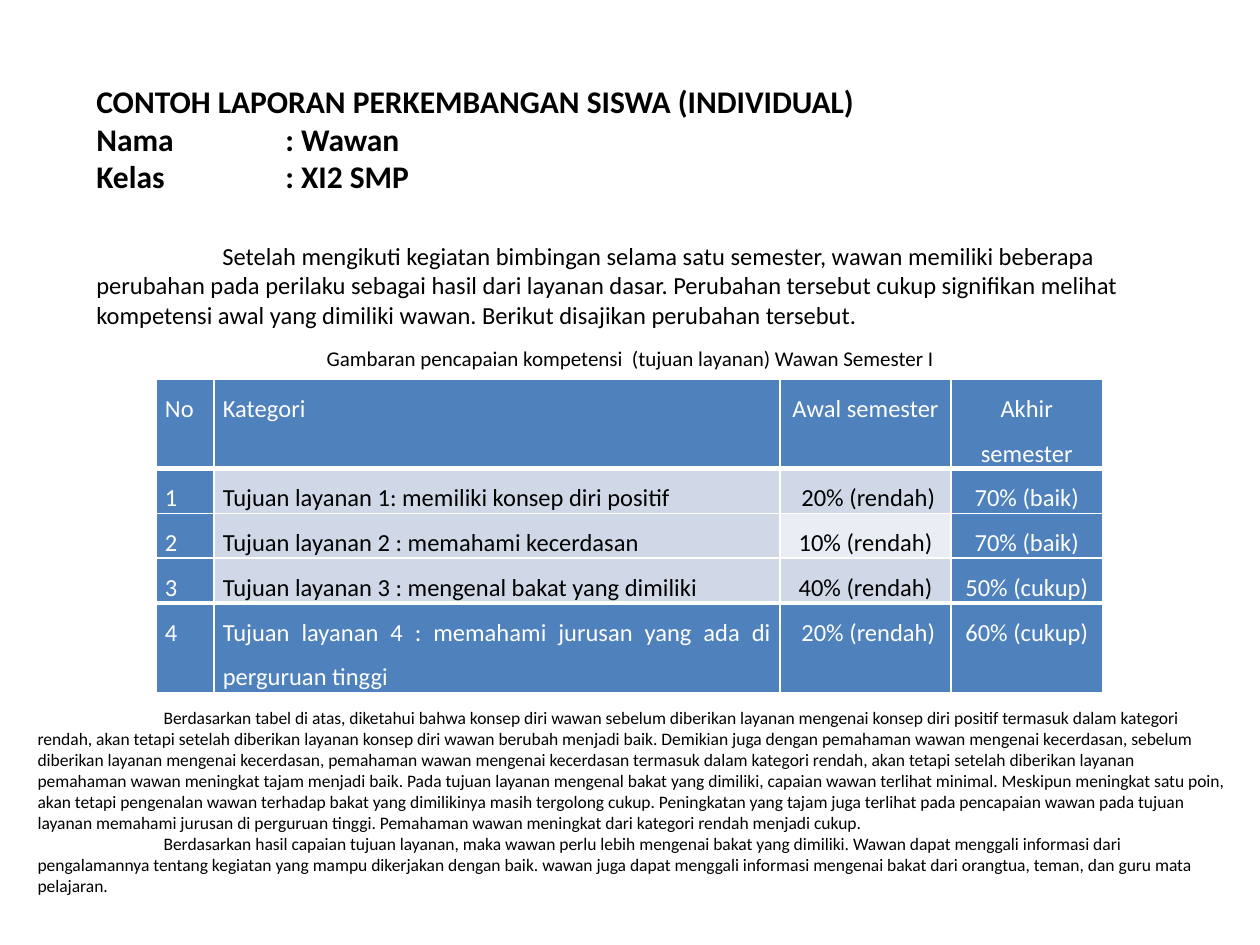
from dataclasses import dataclass

from lxml import etree
from pptx import Presentation
from pptx.dml.color import RGBColor
from pptx.enum.text import MSO_ANCHOR, MSO_AUTO_SIZE, PP_ALIGN
from pptx.oxml.ns import qn
from pptx.util import Pt

LEFT, CENTER, JUSTIFY = PP_ALIGN.LEFT, PP_ALIGN.CENTER, PP_ALIGN.JUSTIFY
TOP = MSO_ANCHOR.TOP
NO_FIT = MSO_AUTO_SIZE.NONE


@dataclass(frozen=True)
class Theme:
    """Colours, font and type sizes of the slide."""
    font: str = "Calibri"
    black: str = "000000"
    white: str = "FFFFFF"
    blue: str = "4F81BD"
    band: str = "D0D8E8"
    pale: str = "E9EDF4"
    heading: int = 18
    body: int = 14
    caption: int = 12
    note: int = 10
    indent: int = 72


THEME = Theme()

HEADING = [
    "CONTOH LAPORAN PERKEMBANGAN SISWA (INDIVIDUAL)",
    "Nama\t\t: Wawan",
    "Kelas\t\t: XI2 SMP",
]
INTRO = (
    "Setelah mengikuti kegiatan bimbingan selama satu semester, wawan memiliki beberapa "
    "perubahan pada perilaku sebagai hasil dari layanan dasar. Perubahan tersebut cukup "
    "signifikan melihat kompetensi awal yang dimiliki wawan. Berikut disajikan perubahan "
    "tersebut."
)
CAPTION = "Gambaran pencapaian kompetensi  (tujuan layanan) Wawan Semester I"
ROWS = [
    ["No", "Kategori", "Awal semester", "Akhir semester"],
    ["1", "Tujuan layanan 1: memiliki konsep diri positif", " 20% (rendah)", "70% (baik)"],
    ["2", "Tujuan layanan 2 : memahami kecerdasan", "10% (rendah)", "70% (baik)"],
    ["3", "Tujuan layanan 3 : mengenal bakat yang dimiliki", "40% (rendah)", "50% (cukup)"],
    ["4", "Tujuan layanan 4 : memahami jurusan yang ada di perguruan tinggi",
     " 20% (rendah)", "60% (cukup)"],
]
COL_WIDTHS = [33.1, 323.3, 97.9, 86.4]
ROW_HEIGHTS = [50.4, 25.2, 25.2, 25.2, 50.4]
RESULT_SENTENCES = [
    "Berdasarkan tabel di atas, diketahui bahwa konsep diri wawan sebelum diberikan layanan "
    "mengenai konsep diri positif termasuk dalam kategori rendah, akan tetapi setelah "
    "diberikan layanan konsep diri wawan berubah menjadi baik.",
    "Demikian juga dengan pemahaman wawan mengenai kecerdasan, sebelum diberikan layanan "
    "mengenai kecerdasan, pemahaman wawan mengenai kecerdasan termasuk dalam kategori "
    "rendah, akan tetapi setelah diberikan layanan pemahaman wawan meningkat tajam menjadi "
    "baik.",
    "Pada tujuan layanan mengenal bakat yang dimiliki, capaian wawan terlihat minimal.",
    "Meskipun meningkat satu poin, akan tetapi pengenalan wawan terhadap bakat yang "
    "dimilikinya masih tergolong cukup.",
    "Peningkatan yang tajam juga terlihat pada pencapaian wawan pada tujuan layanan "
    "memahami jurusan di perguruan tinggi.",
    "Pemahaman wawan meningkat dari kategori rendah menjadi cukup.",
]
ADVICE_SENTENCES = [
    "Berdasarkan hasil capaian tujuan layanan, maka wawan perlu lebih mengenai bakat yang "
    "dimiliki.",
    "Wawan dapat menggali informasi dari pengalamannya tentang kegiatan yang mampu "
    "dikerjakan dengan baik.",
    "wawan juga dapat menggali informasi mengenai bakat dari orangtua, teman, dan guru mata "
    "pelajaran.",
]


def write_paragraph(p, text, size, color=THEME.black, bold=False, align=LEFT, indent=0):
    """Fill a paragraph and format its runs."""
    p.text = text
    p.alignment = align
    if indent:
        p._p.get_or_add_pPr().set("indent", str(Pt(indent)))
    for r in p.runs:
        r.font.name = THEME.font
        r.font.size = Pt(size)
        r.font.bold = bold
        r.font.color.rgb = RGBColor.from_string(color)


def add_text_frame(slide, left, top, width, height, wrap=True):
    """Add a text box and return its text frame."""
    sp = slide.shapes.add_textbox(Pt(left), Pt(top), Pt(width), Pt(height))
    tf = sp.text_frame
    tf.word_wrap = wrap
    tf.auto_size = NO_FIT
    tf.vertical_anchor = TOP
    return tf


def add_paragraphs(tf, texts, size, **style):
    """Write several paragraphs of one style into a text frame."""
    for i, text in enumerate(texts):
        p = tf.add_paragraph() if i else tf.paragraphs[0]
        write_paragraph(p, text, size, **style)


def set_border(cell, side, width):
    """Draw one white edge of a table cell."""
    tc_pr = cell._tc.get_or_add_tcPr()
    ln = etree.SubElement(tc_pr, qn(f"a:ln{side}"), w=str(Pt(width)))
    fill = etree.SubElement(ln, qn("a:solidFill"))
    etree.SubElement(fill, qn("a:srgbClr"), val=THEME.white)


def cell_fill(row, col):
    """Return the fill colour of a table cell."""
    if row in (0, len(ROWS) - 1) or col in (0, 3):
        return THEME.blue
    return THEME.pale if (row, col) == (2, 2) else THEME.band


def format_cell(cell, row, col):
    """Write and style one table cell."""
    last = len(ROWS) - 1
    for side in "LRTB":
        thick = (side, row) in (("B", 0), ("T", 1), ("B", last - 1), ("T", last))
        set_border(cell, side, 3 if thick else 1)
    color = cell_fill(row, col)
    cell.fill.solid()
    cell.fill.fore_color.rgb = RGBColor.from_string(color)
    cell.margin_left = cell.margin_right = Pt(5)
    cell.margin_top = cell.margin_bottom = Pt(0)
    p = cell.text_frame.paragraphs[0]
    write_paragraph(p, ROWS[row][col], THEME.body,
                    color=THEME.white if color == THEME.blue else THEME.black,
                    align=JUSTIFY if col < 2 else CENTER)
    p.line_spacing = 1.5


def add_score_table(slide, left, top):
    """Add the table of scores at the start and end of the semester."""
    table = slide.shapes.add_table(
        len(ROWS), len(COL_WIDTHS), Pt(left), Pt(top),
        Pt(sum(COL_WIDTHS)), Pt(sum(ROW_HEIGHTS))).table
    for column, width in zip(table.columns, COL_WIDTHS):
        column.width = Pt(width)
    for i, height in enumerate(ROW_HEIGHTS):
        table.rows[i].height = Pt(height)
        for j in range(len(COL_WIDTHS)):
            format_cell(table.cell(i, j), i, j)


def main():
    """Build the student report slide."""
    prs = Presentation()
    prs.slide_width, prs.slide_height = Pt(720), Pt(540)
    slide = prs.slides.add_slide(prs.slide_layouts[6])

    tf = add_text_frame(slide, 48, 43.2, 623.5, 150.5)
    add_paragraphs(tf, HEADING, THEME.heading, bold=True)
    p = tf.add_paragraph()
    write_paragraph(p, INTRO, THEME.body, indent=THEME.indent)
    p.space_before = Pt(26)

    add_score_table(slide, 89.3, 216.7)

    tf = add_text_frame(slide, 159.8, 193.7, 401, 36, wrap=False)
    add_paragraphs(tf, [CAPTION], THEME.caption, align=CENTER)

    tf = add_text_frame(slide, 14.4, 400.3, 692, 128.2)
    notes = [" ".join(RESULT_SENTENCES), " ".join(ADVICE_SENTENCES)]
    add_paragraphs(tf, notes, THEME.note, indent=THEME.indent)

    prs.save("out.pptx")


if __name__ == "__main__":
    main()
